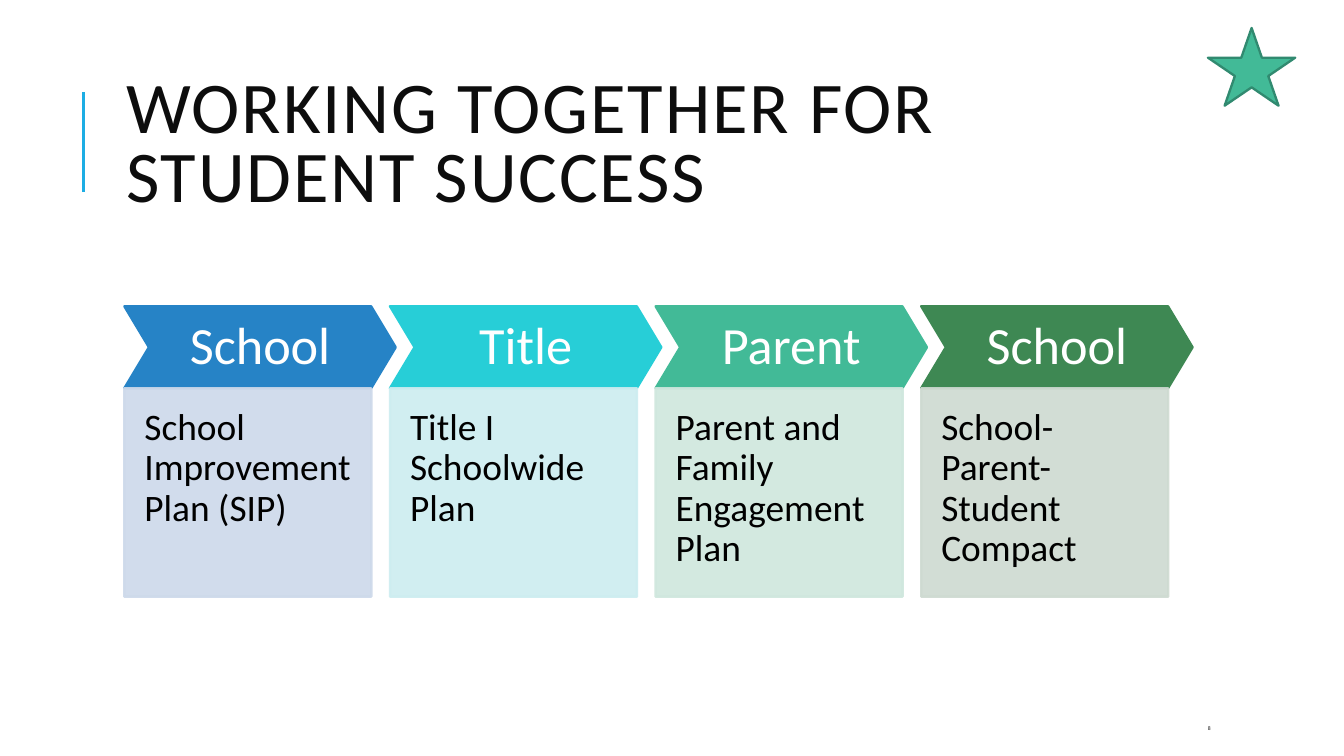
from lxml import etree
from pptx import Presentation
from pptx.dml.color import RGBColor
from pptx.enum.shapes import MSO_CONNECTOR, MSO_SHAPE
from pptx.enum.text import MSO_ANCHOR, MSO_AUTO_SIZE, PP_ALIGN
from pptx.oxml.ns import qn
from pptx.util import Cm, Pt

COLORS = {
    "ink": "0D0D0D", "black": "000000", "white": "FFFFFF",
    "accent": "1CADE4", "star": "42BA97", "star edge": "318A70",
    "blue": "2683C6", "pale blue": "CDD9EA",
    "cyan": "27CED7", "pale cyan": "CDEDF0",
    "teal": "42BA97", "pale teal": "CFE7DD",
    "green": "3E8853", "pale green": "CEDAD1",
}

PLANS = [
    ("School", "School Improvement Plan (SIP)", "blue"),
    ("Title", "Title I Schoolwide Plan", "cyan"),
    ("Parent", "Parent and Family Engagement Plan", "teal"),
    ("School", "School-Parent-Student Compact", "green"),
]


class SlideBuilder:
    font = "Calibri"
    edge = Pt(1.25)

    def __init__(self, slide):
        self.slide = slide

    def color(self, name):
        return RGBColor.from_string(COLORS[name])

    def add_text(self, frame, text, size, color, spacing, align=PP_ALIGN.LEFT,
                 anchor=MSO_ANCHOR.MIDDLE, margins=None):
        """Fill a text frame with one run; margins are left, top, right, bottom in cm."""
        frame.word_wrap = True
        frame.auto_size = MSO_AUTO_SIZE.NONE
        frame.vertical_anchor = anchor
        if margins:
            (frame.margin_left, frame.margin_top,
             frame.margin_right, frame.margin_bottom) = map(Cm, margins)
        paragraph = frame.paragraphs[0]
        paragraph.alignment = align
        paragraph.line_spacing = spacing
        run = paragraph.add_run()
        run.text = text
        run.font.name = self.font
        run.font.size = Pt(size)
        run.font.color.rgb = self.color(color)
        return run

    def title(self, text, box):
        heading = self.slide.shapes.title
        heading.left, heading.top, heading.width, heading.height = map(Cm, box)
        run = self.add_text(heading.text_frame, text, 39, "ink", 0.8)
        run._r.get_or_add_rPr().set("spc", "100")

    def label(self, text, box, size):
        label = self.slide.shapes.add_textbox(*map(Cm, box))
        self.add_text(label.text_frame, text, size, "ink", 0.8)

    def rule(self, start, end):
        rule = self.slide.shapes.add_connector(
            MSO_CONNECTOR.STRAIGHT, *map(Cm, start + end))
        rule.line.color.rgb = self.color("accent")
        rule.line.width = Pt(1.5)
        etree.SubElement(rule._element.spPr, qn("a:effectLst"))

    def shape(self, kind, box, fill, line, opacity=100):
        shape = self.slide.shapes.add_shape(kind, *map(Cm, box))
        shape.shadow.inherit = False
        shape.fill.solid()
        shape.fill.fore_color.rgb = self.color(fill)
        shape.line.color.rgb = self.color(line)
        shape.line.width = self.edge
        if opacity < 100:
            for tint in shape._element.spPr.iter(qn("a:srgbClr")):
                etree.SubElement(tint, qn("a:alpha"), val=str(opacity * 1000))
        return shape

    def plan(self, left, heading, detail, color):
        """Draw a chevron heading with its detail panel below."""
        chevron = self.shape(MSO_SHAPE.CHEVRON, (left, 5.79, 5.13, 1.55), color, color)
        chevron.adjustments[0] = 0.3
        self.add_text(chevron.text_frame, heading, 28, "white", 0.9,
                      align=PP_ALIGN.CENTER, margins=(0.18,) * 4)
        pale = f"pale {color}"
        panel = self.shape(MSO_SHAPE.RECTANGLE, (left, 7.34, 4.67, 3.94), pale, pale, 90)
        self.add_text(panel.text_frame, detail, 20, "black", 0.9,
                      anchor=MSO_ANCHOR.TOP, margins=(0.38, 0.38, 0.38, 0.74))


def main():
    deck = Presentation()
    deck.slide_width, deck.slide_height = Cm(25.4), Cm(14.29)
    builder = SlideBuilder(deck.slides.add_slide(deck.slide_layouts[5]))

    builder.rule((1.58, 3.63), (1.58, 1.73))
    builder.title("WORKING TOGETHER FOR STUDENT SUCCESS", (2.13, 1.22, 20.24, 3.12))
    builder.label("8", (22.58, 13.49, 2.03, 0.58), 3)
    builder.shape(MSO_SHAPE.STAR_5_POINT, (22.83, 0.53, 1.65, 1.47), "star", "star edge")

    first_left, pitch = 2.35, 5.02
    for column, (heading, detail, color) in enumerate(PLANS):
        builder.plan(first_left + column * pitch, heading, detail, color)

    deck.save("out.pptx")


if __name__ == "__main__":
    main()
